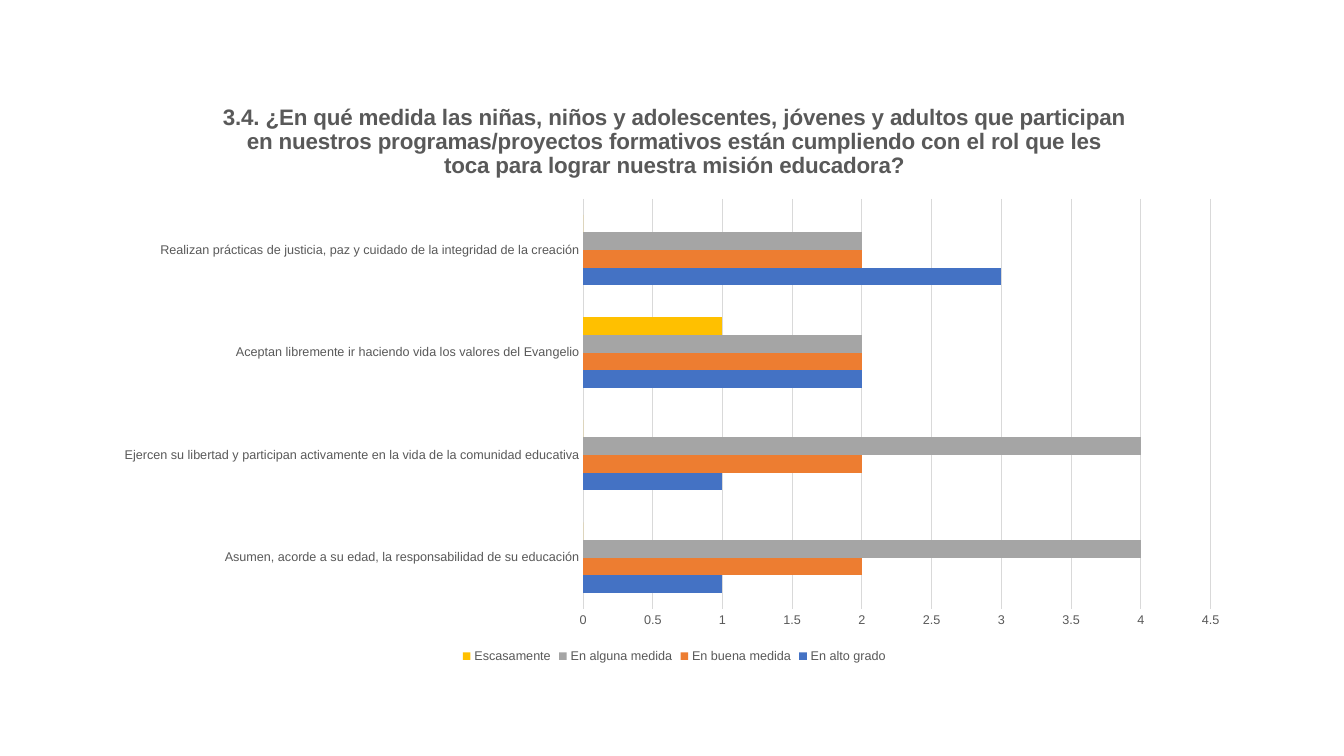
from dataclasses import dataclass

from lxml.etree import SubElement
from pptx import Presentation
from pptx.chart.data import CategoryChartData
from pptx.dml.color import RGBColor
from pptx.enum.chart import XL_CHART_TYPE, XL_LEGEND_POSITION, XL_TICK_MARK
from pptx.oxml.ns import qn
from pptx.util import Cm, Pt


@dataclass(frozen=True)
class Theme:
    font: str = "Arial"
    text: str = "595959"
    rule: str = "D9D9D9"
    title_size: int = 16
    label_size: int = 9
    line_width: float = 0.75


THEME = Theme()

TITLE = (
    "3.4. ¿En qué medida las niñas, niños y adolescentes, jóvenes y adultos que participan "
    "en nuestros programas/proyectos formativos están cumpliendo con el rol que les toca "
    "para lograr nuestra misión educadora?"
)
CATEGORIES = [
    "Asumen, acorde a su edad, la responsabilidad de su educación",
    "Ejercen su libertad y participan activamente en la vida de la comunidad educativa",
    "Aceptan libremente ir haciendo vida los valores del Evangelio",
    "Realizan prácticas de justicia, paz y cuidado de la integridad de la creación",
]
ANSWERS = [
    ("En alto grado", (1, 1, 2, 3), "4472C4"),
    ("En buena medida", (2, 2, 2, 2), "ED7D31"),
    ("En alguna medida", (4, 4, 2, 2), "A5A5A5"),
    ("Escasamente", (0, 0, 1, 0), "FFC000"),
]
PLOT_LAYOUT = {"x": 0.42, "y": 0.2, "w": 0.55, "h": 0.7}


def style_font(font, size, bold=False):
    font.name = THEME.font
    font.size = Pt(size)
    font.bold = bold
    font.color.rgb = RGBColor.from_string(THEME.text)


def style_line(line):
    line.color.rgb = RGBColor.from_string(THEME.rule)
    line.width = Pt(THEME.line_width)


def add_answer_chart(slide):
    data = CategoryChartData()
    data.categories = CATEGORIES
    for name, values, _ in ANSWERS:
        data.add_series(name, values)
    chart = slide.shapes.add_chart(
        XL_CHART_TYPE.BAR_CLUSTERED, Cm(2.62), Cm(2.06), Cm(28.75), Cm(14.76), data
    ).chart
    style_font(chart.font, THEME.label_size)
    plot = chart.plots[0]
    plot.gap_width = 182
    plot.vary_by_categories = False
    for series, (_, _, color) in zip(plot.series, ANSWERS):
        series.format.fill.solid()
        series.format.fill.fore_color.rgb = RGBColor.from_string(color)
    return chart


def set_title(chart):
    chart.has_title = True
    chart.chart_title.include_in_layout = False
    text_frame = chart.chart_title.text_frame
    text_frame.text = TITLE
    style_font(text_frame.paragraphs[0].font, THEME.title_size, bold=True)


def set_axes(chart):
    for axis in (chart.category_axis, chart.value_axis):
        axis.major_tick_mark = XL_TICK_MARK.NONE
        axis.minor_tick_mark = XL_TICK_MARK.NONE
        style_font(axis.tick_labels.font, THEME.label_size)
    style_line(chart.category_axis.format.line)
    value_axis = chart.value_axis
    value_axis.minimum_scale = 0
    value_axis.maximum_scale = 4.5
    value_axis.major_unit = 0.5
    value_axis.format.line.fill.background()
    value_axis.has_major_gridlines = True
    style_line(value_axis.major_gridlines.format.line)


def set_legend(chart):
    chart.has_legend = True
    chart.legend.position = XL_LEGEND_POSITION.BOTTOM
    chart.legend.include_in_layout = False
    style_font(chart.legend.font, THEME.label_size)


def set_plot_layout(chart):
    plot_area = chart.element.find(".//" + qn("c:plotArea"))
    for layout in plot_area.findall(qn("c:layout")):
        plot_area.remove(layout)
    layout = SubElement(plot_area, qn("c:layout"))
    plot_area.insert(0, layout)
    manual = SubElement(layout, qn("c:manualLayout"))
    settings = {"layoutTarget": "inner", "xMode": "edge", "yMode": "edge", **PLOT_LAYOUT}
    for name, value in settings.items():
        SubElement(manual, qn(f"c:{name}")).set("val", str(value))


def main():
    presentation = Presentation()
    presentation.slide_width = Cm(33.87)
    presentation.slide_height = Cm(19.05)
    slide = presentation.slides.add_slide(presentation.slide_layouts[6])
    chart = add_answer_chart(slide)
    set_title(chart)
    set_axes(chart)
    set_legend(chart)
    set_plot_layout(chart)
    presentation.save("out.pptx")


if __name__ == "__main__":
    main()
